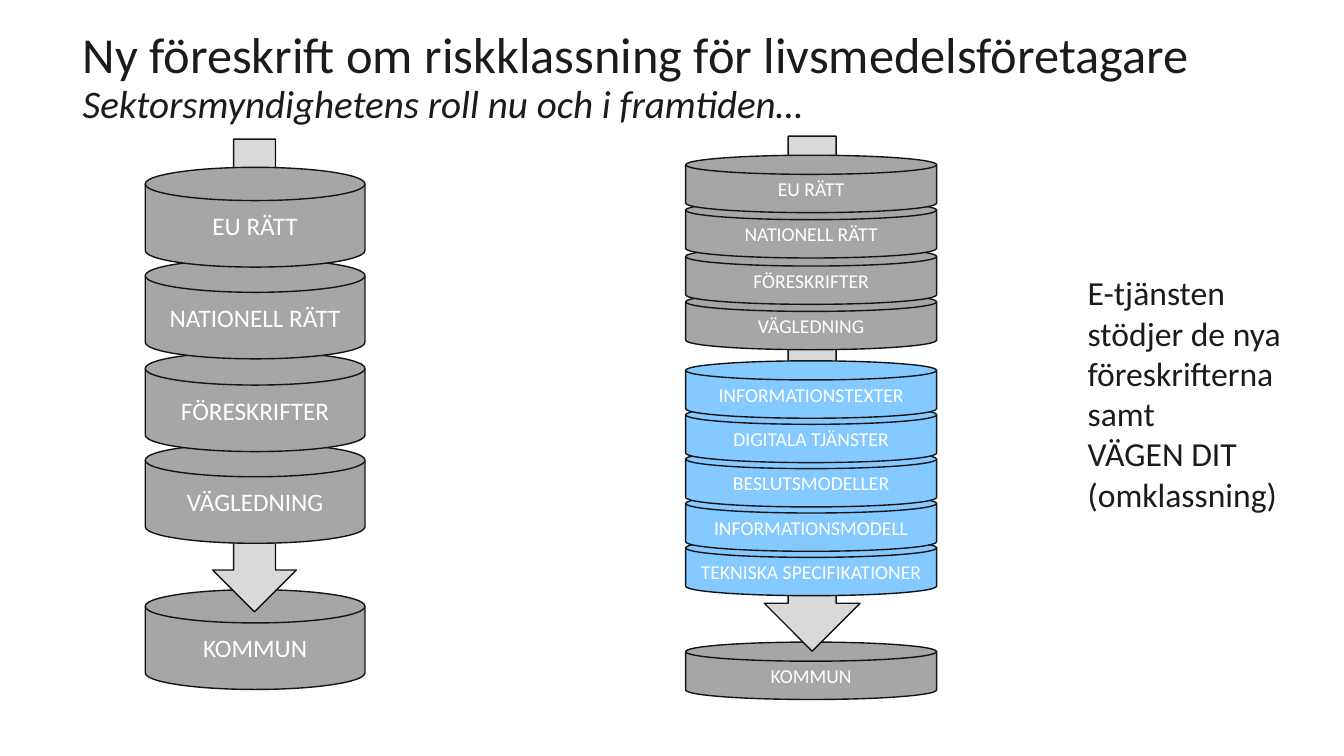
from lxml.etree import SubElement
from pptx import Presentation
from pptx.dml.color import RGBColor
from pptx.enum.shapes import MSO_SHAPE as Shape
from pptx.enum.text import MSO_ANCHOR as Anchor, MSO_AUTO_SIZE as AutoSize, PP_ALIGN as Align
from pptx.oxml.ns import qn
from pptx.util import Pt

PX = 9144  # 100 px to the inch
FONT = "Calibri"
WHITE = RGBColor(0xFF, 0xFF, 0xFF)
INK = RGBColor(0x1B, 0x1B, 0x1B)
OUTLINE = RGBColor(0x14, 0x14, 0x14)
GREY = RGBColor(0xA6, 0xA6, 0xA6)
LIGHT_GREY = RGBColor(0xD9, 0xD9, 0xD9)
BLUE = RGBColor(0x84, 0xC9, 0xFF)

HEADING = "Ny föreskrift om riskklassning för livsmedelsföretagare"
SUBHEADING = "Sektorsmyndighetens roll nu och i framtiden…"
NOTE = ["E-tjänsten stödjer de nya föreskrifterna samt", "VÄGEN DIT (omklassning)"]
RULES = ["EU RÄTT", "NATIONELL RÄTT", "FÖRESKRIFTER", "VÄGLEDNING"]
E_SERVICE = ["INFORMATIONSTEXTER", "DIGITALA TJÄNSTER", "BESLUTSMODELLER",
             "INFORMATIONSMODELL", "TEKNISKA SPECIFIKATIONER"]
RECIPIENT = "KOMMUN"

# Each pile: (labels, colour, top of first disk, top of last disk)
COLUMNS = [
    {"left": 144, "width": 218, "disk_height": 99, "size": 18,
     "arrow": (211, 138, 83, 469), "recipient_top": 585,
     "piles": [(RULES, GREY, 166, 440)]},
    {"left": 680, "width": 249, "disk_height": 57, "size": 14,
     "arrow": (758, 135, 95, 511), "recipient_top": 637,
     "piles": [(E_SERVICE, BLUE, 358, 534), (RULES, GREY, 154, 290)]},
]


def to_emu(*lengths):
    return [length * PX for length in lengths]


def format_run(run, size, color, italic=None):
    run.font.name = FONT
    run.font.size = Pt(size)
    run.font.color.rgb = color
    run.font.italic = italic


def add_outlined(slide, kind, box, fill):
    shape = slide.shapes.add_shape(kind, *to_emu(*box))
    shape.shadow.inherit = False
    shape.fill.solid()
    shape.fill.fore_color.rgb = fill
    shape.line.color.rgb = OUTLINE
    shape.line.width = Pt(1)
    return shape


def add_disk(slide, column, top, label, fill):
    box = column["left"], top, column["width"], column["disk_height"]
    disk = add_outlined(slide, Shape.FLOWCHART_MAGNETIC_DISK, box, fill)
    frame = disk.text_frame
    frame.text = label
    frame.vertical_anchor = Anchor.MIDDLE
    frame.paragraphs[0].alignment = Align.CENTER
    format_run(frame.paragraphs[0].runs[0], column["size"], WHITE)


def add_column(slide, column):
    """Draw from the recipient upwards, so each disk overlaps the one below."""
    add_disk(slide, column, column["recipient_top"], RECIPIENT, GREY)
    add_outlined(slide, Shape.DOWN_ARROW, column["arrow"], LIGHT_GREY)
    for labels, fill, first, last in column["piles"]:
        pitch = (last - first) / (len(labels) - 1)
        for index, label in reversed(list(enumerate(labels))):
            add_disk(slide, column, round(first + index * pitch), label, fill)


def set_title(title):
    title.left, title.top, title.width, title.height = to_emu(82, 58, 1196, 68)
    frame = title.text_frame
    frame.text = HEADING + "\v" + SUBHEADING
    frame.auto_size = AutoSize.NONE
    frame.word_wrap = True
    frame.vertical_anchor = Anchor.BOTTOM
    frame.margin_left = frame.margin_top = frame.margin_right = frame.margin_bottom = 0
    paragraph = frame.paragraphs[0]
    paragraph.alignment = Align.LEFT
    paragraph.line_spacing = 0.9
    heading, subheading = paragraph.runs
    format_run(heading, 36, INK)
    format_run(subheading, 27.9, INK, italic=True)
    # The line break takes the heading's size
    SubElement(paragraph._p.find(qn("a:br")), qn("a:rPr"), sz="3600")


def add_note(slide):
    frame = slide.shapes.add_textbox(*to_emu(1069, 265, 220, 252)).text_frame
    frame.word_wrap = True
    frame.auto_size = AutoSize.SHAPE_TO_FIT_TEXT
    frame.text = "\n".join(NOTE)
    for paragraph in frame.paragraphs:
        format_run(paragraph.runs[0], 24, INK)


def main():
    deck = Presentation()
    deck.slide_width, deck.slide_height = to_emu(1333, 750)
    slide = deck.slides.add_slide(deck.slide_layouts[5])
    set_title(slide.shapes.title)
    for column in COLUMNS:
        add_column(slide, column)
    add_note(slide)
    deck.save("out.pptx")


if __name__ == "__main__":
    main()
